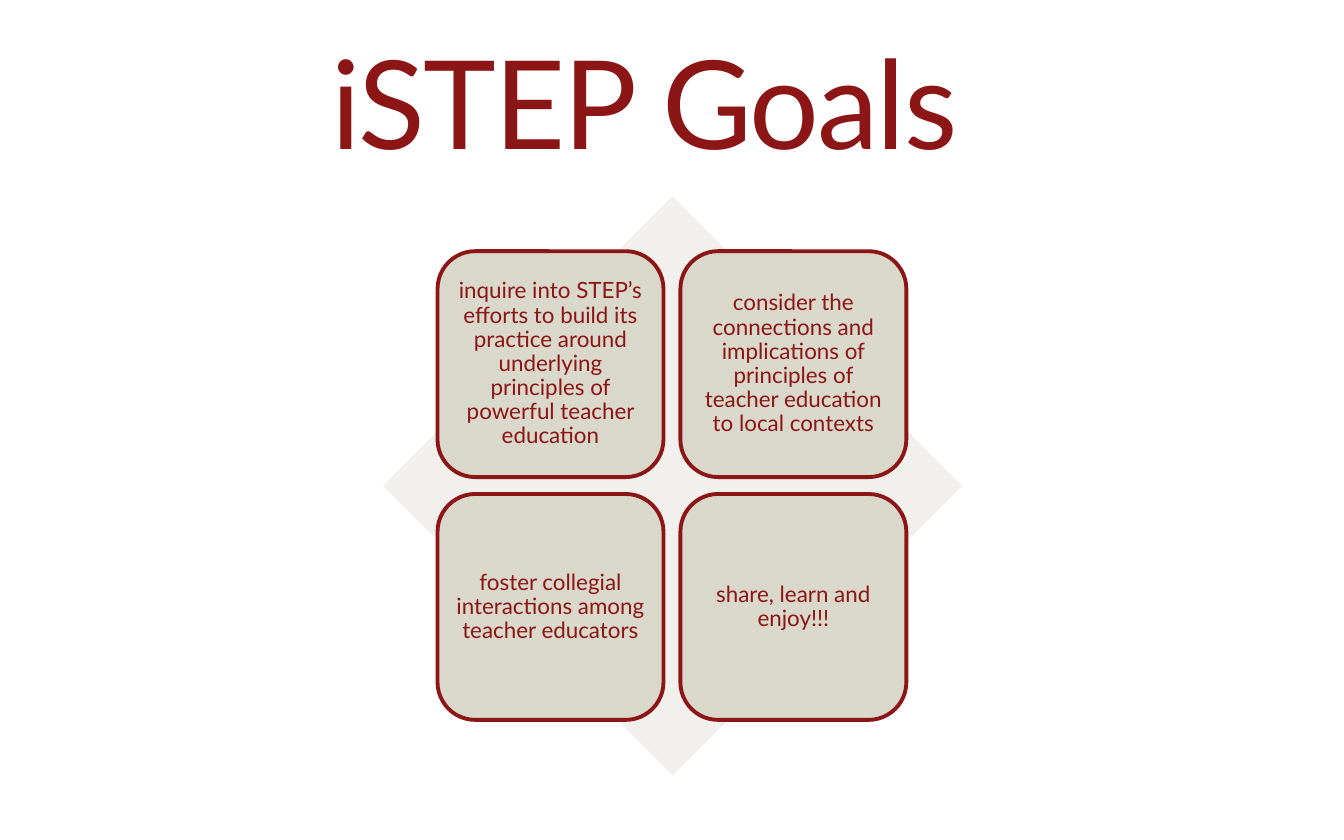
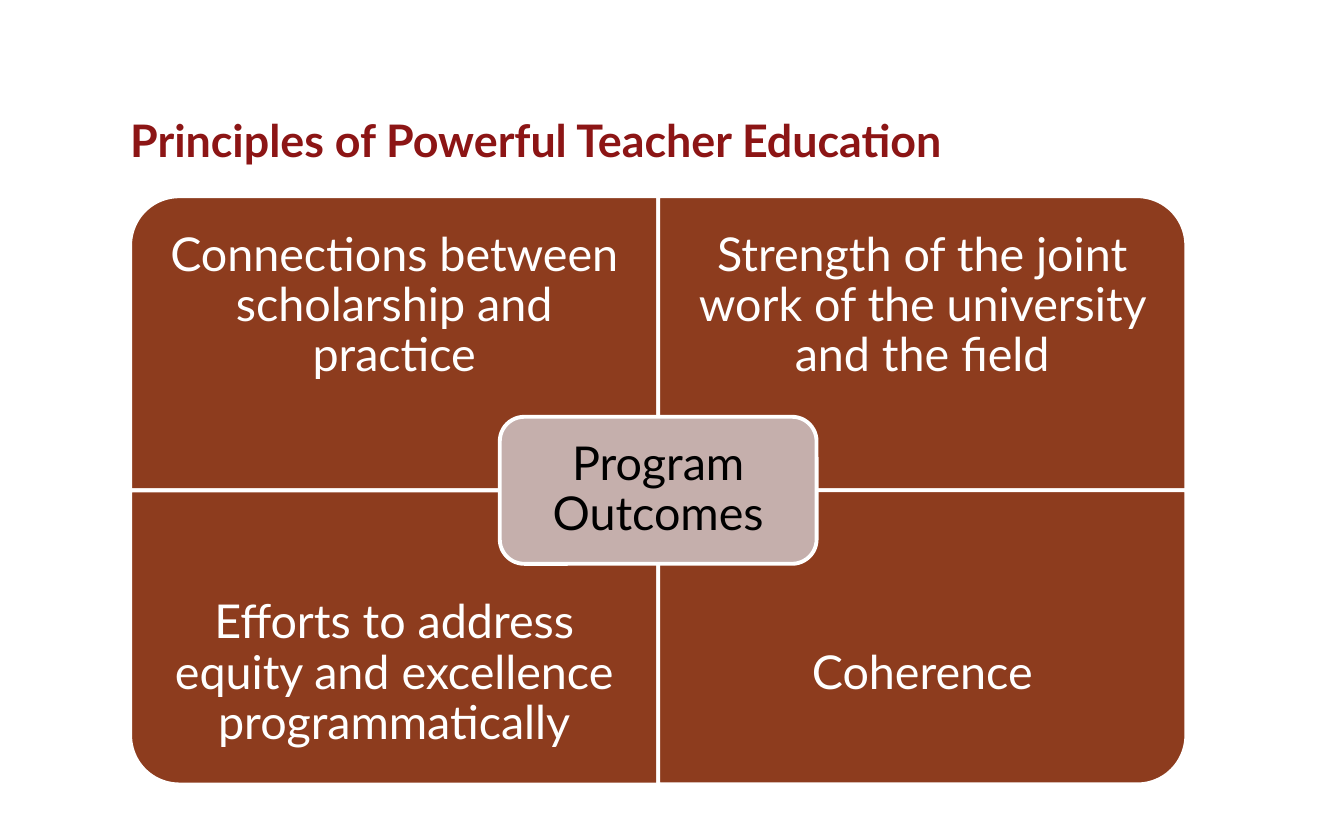
from pptx import Presentation
from pptx.dml.color import RGBColor
from pptx.enum.shapes import MSO_SHAPE
from pptx.enum.text import MSO_ANCHOR, MSO_AUTO_SIZE, PP_ALIGN
from pptx.util import Cm, Pt

DIAMOND = MSO_SHAPE.DIAMOND
ROUND = MSO_SHAPE.ROUNDED_RECTANGLE
CORNER = MSO_SHAPE.ROUND_1_RECTANGLE
LEFT, CENTER = PP_ALIGN.LEFT, PP_ALIGN.CENTER
TOP, MIDDLE, BOTTOM = MSO_ANCHOR.TOP, MSO_ANCHOR.MIDDLE, MSO_ANCHOR.BOTTOM
FIXED = MSO_AUTO_SIZE.NONE

# Shared style
FONT = "Lato"
RED, SAND, PALE = "8C1515", "DAD7CB", "F1F0EC"
RUST, ROSE, WHITE, BLACK = "8D3C1E", "C5AFAC", "FFFFFF", "000000"
EDGE = 2.08
TITLE_ONLY = 5

GOALS = [
    "inquire into STEP’s efforts to build its practice around "
    "underlying principles of powerful teacher education",
    "consider the connections and implications of principles of "
    "teacher education to local contexts",
    "foster collegial interactions among teacher educators",
    "share, learn and enjoy!!!",
]
# Each principle with the turn that puts its round corner outside
PARTS = [
    ("Connections between scholarship and practice", 270),
    ("Strength of the joint work of the university and the field", 0),
    ("Efforts to address equity and excellence programmatically", 180),
    ("Coherence", 90),
]


def color(code):
    return RGBColor.from_string(code)


def write(shape, text, size, ink, align=CENTER, anchor=MIDDLE, lines=0.9,
          pad=(0.25, 0.13, 0.25, 0.13), bold=False, track=0):
    """Put formatted text in a shape; pad is left, top, right, bottom in cm."""
    frame = shape.text_frame
    frame.word_wrap = True
    frame.auto_size = FIXED
    frame.vertical_anchor = anchor
    (frame.margin_left, frame.margin_top,
     frame.margin_right, frame.margin_bottom) = map(Cm, pad)
    para = frame.paragraphs[0]
    para.alignment = align
    para.line_spacing = lines
    run = para.add_run()
    run.text = text
    font = run.font
    font.name, font.size, font.bold = FONT, Pt(size), bold
    font.color.rgb = color(ink)
    if track:
        run._r.get_or_add_rPr().set("spc", str(track * 100))


def add_title(slide, text, box, size, **style):
    title = slide.shapes.title
    title.left, title.top, title.width, title.height = map(Cm, box)
    write(title, text, size, RED, **style)


def add_form(slide, kind, box, fill, line=None, turn=0):
    shape = slide.shapes.add_shape(kind, *map(Cm, box))
    shape.shadow.inherit = False
    shape.fill.solid()
    shape.fill.fore_color.rgb = color(fill)
    if line:
        shape.line.color.rgb = color(line)
        shape.line.width = Pt(EDGE)
    else:
        shape.line.fill.background()
    shape.rotation = turn
    return shape


def add_panel(slide, box, turn):
    """Draw a panel that fills box once it has been turned."""
    x, y, wide, high = box
    if turn % 180:
        shift = (wide - high) / 2
        box = (x + shift, y - shift, high, wide)
    add_form(slide, CORNER, box, RUST, WHITE, turn)


def build_goals(deck):
    slide = deck.slides.add_slide(deck.slide_layouts[TITLE_ONLY])
    add_title(slide, "iSTEP Goals", (4.24, 0.36, 15.88, 3.07), 66,
              anchor=TOP, lines=1.0, track=-1)
    add_form(slide, DIAMOND, (7.24, 3.71, 10.95, 10.95), PALE)

    # Two by two cards
    left, top, side, step = 8.27, 4.75, 4.27, 4.59
    for i, goal in enumerate(GOALS):
        row, col = divmod(i, 2)
        box = (left + col * step, top + row * step, side, side)
        card = add_form(slide, ROUND, box, SAND, RED)
        write(card, goal, 12, RED, pad=(0.13,) * 4)


def build_parts(deck):
    slide = deck.slides.add_slide(deck.slide_layouts[TITLE_ONLY])
    add_title(slide, "Principles of Powerful Teacher Education",
              (2.46, 0.64, 21.59, 2.64), 24, align=LEFT, anchor=BOTTOM,
              lines=0.85, pad=(0, 0.13, 0.25, 0.13), bold=True)

    # Four panels, their text kept clear of the middle
    left, top, wide, high = 2.46, 3.71, 9.98, 5.56
    clear = high / 4
    for i, (text, turn) in enumerate(PARTS):
        row, col = divmod(i, 2)
        x, y = left + col * wide, top + row * high
        add_panel(slide, (x, y, wide, high), turn)
        area = (x, y + row * clear, wide, high - clear)
        label = slide.shapes.add_textbox(*map(Cm, area))
        write(label, text, 25, WHITE, pad=(0.48,) * 4)

    # Hub over the point where the panels meet
    span, tall = 0.6 * wide, high / 2
    box = (left + wide - span / 2, top + high - tall / 2, span, tall)
    hub = add_form(slide, ROUND, box, ROSE, WHITE)
    write(hub, "Program Outcomes", 25, BLACK, pad=(0.25,) * 4)


def main():
    deck = Presentation()
    deck.slide_width, deck.slide_height = Cm(25.4), Cm(15.88)
    build_goals(deck)
    build_parts(deck)
    deck.save("out.pptx")


if __name__ == "__main__":
    main()
